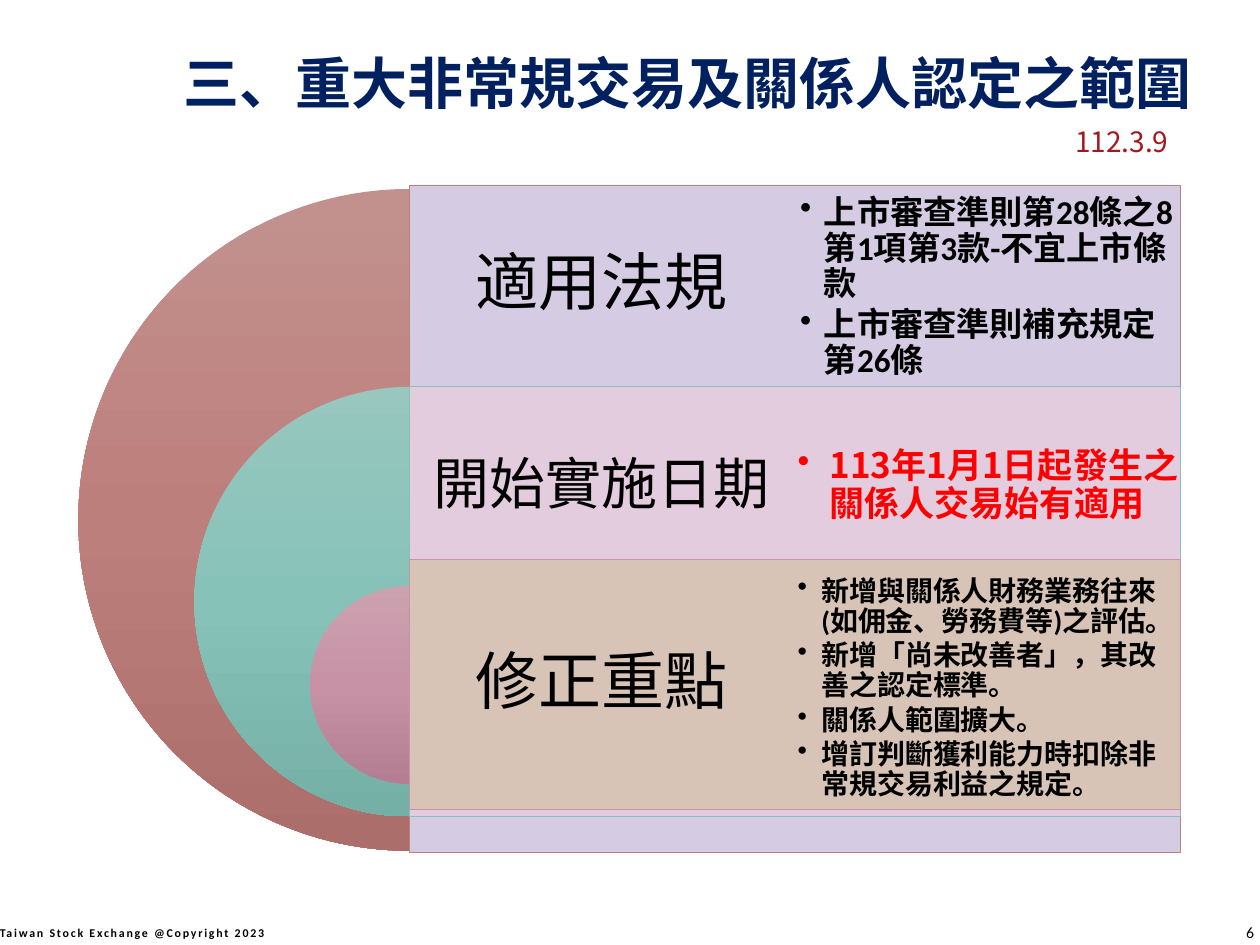
from dataclasses import dataclass
from copy import deepcopy

from pptx import Presentation
from pptx.dml.color import RGBColor
from pptx.enum import shapes, text
from pptx.oxml.ns import qn
from pptx.util import Cm, Pt
from lxml import etree


@dataclass
class Theme:
    cjk: str = "Noto Sans CJK SC"
    latin: str = "Calibri"
    black: str = "000000"
    navy: str = "002060"
    wine: str = "A3171E"
    red: str = "FF0000"
    title: float = 32
    date: float = 16
    foot: float = 6.8
    page: float = 9


THEME = Theme()
MID, TOP = text.MSO_ANCHOR.MIDDLE, text.MSO_ANCHOR.TOP
LEFT, RIGHT, CENTER = text.PP_ALIGN.LEFT, text.PP_ALIGN.RIGHT, text.PP_ALIGN.CENTER

LAYERS = [
    dict(pie=(0.08, 13.34), ramp=("C2918E", "BD7F7C", "AB6E6B"),
         bar=(0, 13.46), fill="D5CCE3", line="BA827F",
         head=("適用法規", 36, 4.04, 0.38),
         body=(13.87, 0.05, 8.97, 4.04), hang=0.48,
         font=(THEME.latin, 19, THEME.black),
         points=["上市審查準則第28條之8第1項第3款-不宜上市條款",
                 "上市審查準則補充規定第26條"]),
    dict(pie=(4.07, 8.66), ramp=("97C7BF", "87C2B9", "75B0A6"),
         bar=(4.07, 8.66), fill="E3CCDE", line="8ABFB7",
         head=("開始實施日期", 32, 3.99, 0.33),
         body=(13.82, 4.07, 9.07, 3.99), hang=0.64,
         font=(THEME.cjk, 20, THEME.red),
         points=["113年1月1日起發生之關係人交易始有適用"]),
    dict(pie=(8.08, 3.99), ramp=("CCA1B0", "C792A5", "B47E92"),
         bar=(7.55, 5.03), fill="D6C4B3", line="C594A6", alpha=90,
         head=("修正重點", 36, 5.03, 0.38),
         body=(13.82, 7.8, 9.02, 4.72), hang=0.48,
         font=(THEME.latin, 16, THEME.black),
         points=["新增與關係人財務業務往來(如佣金、勞務費等)之評估。",
                 "新增「尚未改善者」，其改善之認定標準。",
                 "關係人範圍擴大。",
                 "增訂判斷獲利能力時扣除非常規交易利益之規定。"]),
]


def rgb(code):
    return RGBColor.from_string(code)


def assign(obj, vals):
    for key, val in vals.items():
        setattr(obj, key, val)


def style(para, face, size, color, bold=False, track=0):
    for run in para.runs:
        assign(run.font, dict(name=face, size=Pt(size), bold=bold))
        run.font.color.rgb = rgb(color)
        props = run.font._element
        etree.SubElement(props, qn("a:ea")).set("typeface", THEME.cjk)
        if track:
            props.set("spc", str(round(track * 100)))


def bullet(para, hang):
    props = para._p.get_or_add_pPr()
    props.set("marL", str(Cm(hang)))
    props.set("indent", str(-Cm(hang)))
    etree.SubElement(props, qn("a:buChar")).set("char", "•")


def write(frame, lines, font, pad=(0.25, 0.13), anchor=MID, hang=0, **form):
    """Fill a text frame; pad holds the side and the top/bottom insets."""
    side, edge = map(Cm, pad)
    assign(frame, dict(word_wrap=True, auto_size=text.MSO_AUTO_SIZE.NONE,
                       vertical_anchor=anchor, margin_left=side,
                       margin_right=side, margin_top=edge, margin_bottom=edge))
    for num, line in enumerate(lines):
        para = frame.add_paragraph() if num else frame.paragraphs[0]
        para.add_run().text = line
        if hang:
            para.level = 1
            bullet(para, hang)
        assign(para, form)
        style(para, *font)


def label(slide, box, lines, font, **form):
    frame = slide.shapes.add_textbox(*map(Cm, box)).text_frame
    write(frame, lines, font, **form)


def shape(slide, kind, box):
    item = slide.shapes.add_shape(kind, *map(Cm, box))
    item.shadow.inherit = False
    return item


def half(slide, mid, top, size, ramp):
    """Draw the left half of a disc centred on mid, with a vertical ramp."""
    disc = shape(slide, shapes.MSO_SHAPE.PIE, (mid - size / 2, top, size, size))
    disc.adjustments[0], disc.adjustments[1] = 54, 162
    disc.line.fill.background()
    disc.fill.gradient()
    disc.fill.gradient_angle = 270
    stops = disc._element.spPr.find(".//" + qn("a:gsLst"))
    stops.append(deepcopy(stops[0]))
    for stop, spot, code in zip(disc.fill.gradient_stops, (0, 0.5, 1), ramp):
        stop.position = spot
        stop.color.rgb = rgb(code)


def band(slide, box, fill, line, alpha):
    bar = shape(slide, shapes.MSO_SHAPE.RECTANGLE, box)
    bar.fill.solid()
    bar.fill.fore_color.rgb = rgb(fill)
    bar.line.color.rgb = rgb(line)
    bar.line.width = Pt(0.5)
    if alpha < 100:
        code = bar._element.spPr.find(qn("a:solidFill"))[0]
        etree.SubElement(code, qn("a:alpha")).set("val", str(alpha * 1000))


def layer(slide, left, top, part):
    """Place one half disc, its band, heading and bullet list."""
    mid, width = left + 6.68, 15.54
    start, tall = part["bar"]
    drop, size = part["pie"]
    half(slide, mid, top + drop, size, part["ramp"])
    band(slide, (mid, top + start, width, tall),
         part["fill"], part["line"], part.get("alpha", 100))
    name, points, high, pad = part["head"]
    label(slide, (mid, top + start, width / 2, high), [name],
          (THEME.cjk, points, THEME.black), pad=(pad, pad),
          alignment=CENTER, line_spacing=0.9, space_after=Pt(points * 0.35))
    x, y, w, h = part["body"]
    label(slide, (left + x, top + y, w, h), part["points"],
          (*part["font"], True), pad=(0.69, 0.69), hang=part["hang"],
          alignment=LEFT, line_spacing=0.9,
          space_after=Pt(part["font"][1] * 0.15))


def header(slide, left, top):
    title = slide.shapes.title
    assign(title, dict(left=Cm(left), top=Cm(top), width=Cm(20.96), height=Cm(1.4)))
    write(title.text_frame, ["三、重大非常規交易及關係人認定之範圍"],
          (THEME.cjk, THEME.title, THEME.navy, True), anchor=TOP,
          alignment=LEFT, line_spacing=Pt(32))
    label(slide, (left + 17.98, top + 1.32, 2.69, 0.94), ["112.3.9"],
          (THEME.cjk, THEME.date, THEME.wine), anchor=TOP)


def footer(slide, top):
    label(slide, (-0.28, top, 5.89, 1.02),
          ["Taiwan Stock Exchange @Copyright 2023"],
          (THEME.latin, THEME.foot, THEME.black, True, 1),
          pad=(0.18, 0.1), alignment=CENTER)
    label(slide, (24.41, top, 1.12, 1.02), ["6"],
          (THEME.latin, THEME.page, THEME.black, False, 0.8), alignment=RIGHT)


def main():
    deck = Presentation()
    deck.slide_width, deck.slide_height = Cm(25.4), Cm(19.05)
    slide = deck.slides.add_slide(deck.slide_layouts[5])
    footer(slide, 18.29)
    for part in LAYERS:
        layer(slide, 1.57, 3.73, part)
    header(slide, 3.45, 1.07)
    deck.save("out.pptx")


if __name__ == "__main__":
    main()
